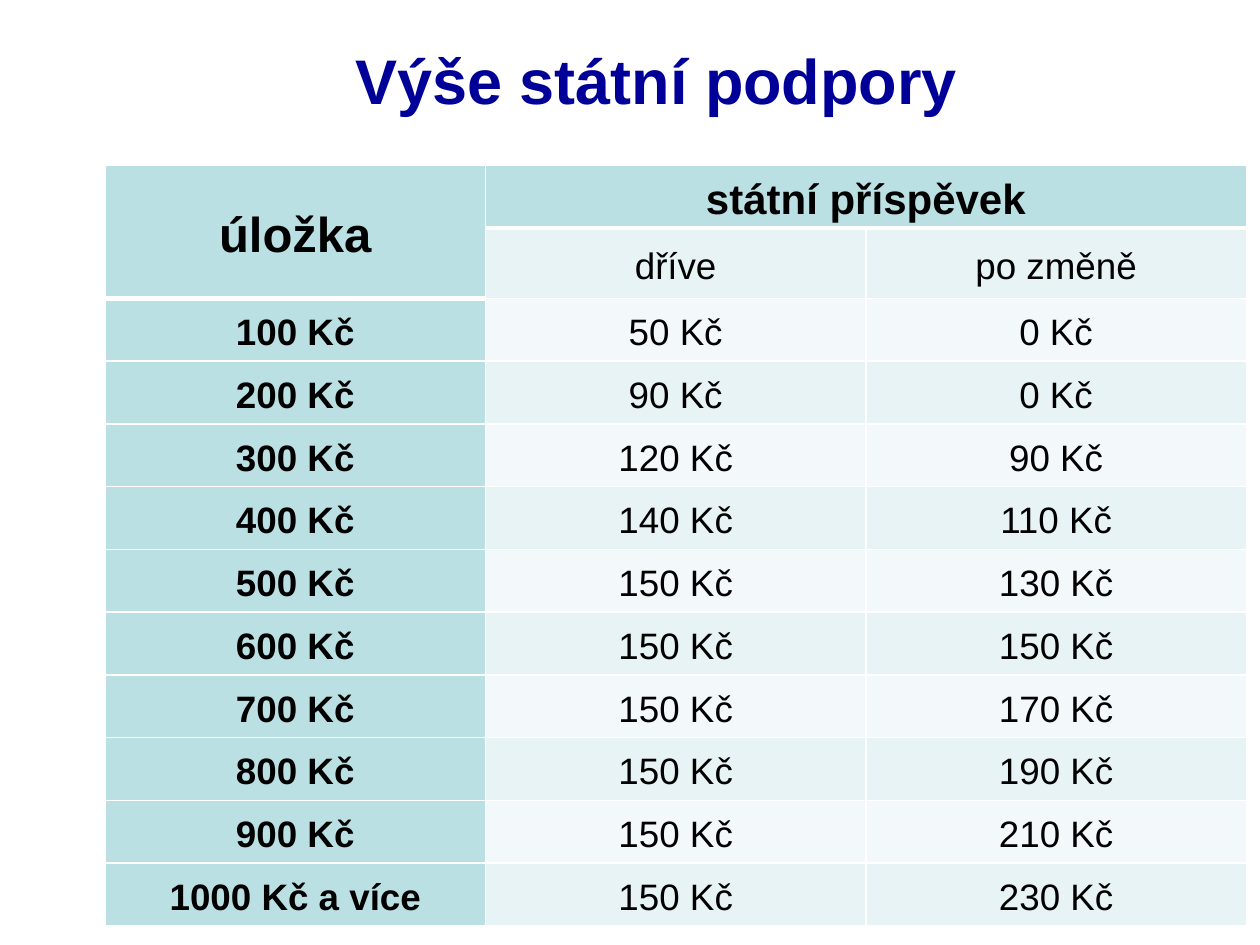
from lxml.etree import SubElement
from pptx import Presentation
from pptx.dml.color import RGBColor
from pptx.enum.text import MSO_ANCHOR as Anchor, PP_ALIGN as Align
from pptx.oxml.ns import qn
from pptx.util import Pt

NAVY = RGBColor(0x00, 0x00, 0x99)
BLACK = RGBColor(0x00, 0x00, 0x00)
WHITE = RGBColor(0xFF, 0xFF, 0xFF)
TEAL = RGBColor(0xBB, 0xE0, 0xE3)
BAND_DARK = RGBColor(0xE7, 0xF3, 0xF4)
BAND_LIGHT = RGBColor(0xF3, 0xF9, 0xFA)

ROWS = [
    ("úložka", "státní příspěvek", ""),
    ("", "dříve", "po změně"),
    ("100 Kč", "50 Kč", "0 Kč"),
    ("200 Kč", "90 Kč", "0 Kč"),
    ("300 Kč", "120 Kč", "90 Kč"),
    ("400 Kč", "140 Kč", "110 Kč"),
    ("500 Kč", "150 Kč", "130 Kč"),
    ("600 Kč", "150 Kč", "150 Kč"),
    ("700 Kč", "150 Kč", "170 Kč"),
    ("800 Kč", "150 Kč", "190 Kč"),
    ("900 Kč", "150 Kč", "210 Kč"),
    ("1000 Kč a více", "150 Kč", "230 Kč"),
]
COLUMN_WIDTH = Pt(217.4)
ROW_HEIGHT = Pt(35.88)
HEADER_SIZES = {(0, 0): 28, (0, 1): 24}
HEADER_BOTTOMS = {(0, 0), (1, 0), (0, 1), (0, 2)}


def style_paragraph(para, size, color, bold):
    para.alignment = Align.CENTER
    para.font.name = "Arial"
    para.font.size = Pt(size)
    para.font.bold = bold
    para.font.color.rgb = color


def add_borders(cell, top, bottom):
    """Draw white cell borders; top and bottom are widths in points."""
    properties = cell._tc.get_or_add_tcPr()
    for side, width in (("L", 1), ("R", 1), ("T", top), ("B", bottom)):
        line = SubElement(properties, qn(f"a:ln{side}"), w=str(Pt(width)))
        fill = SubElement(line, qn("a:solidFill"))
        SubElement(fill, qn("a:srgbClr"), val=str(WHITE))


deck = Presentation()
deck.slide_width, deck.slide_height = Pt(720), Pt(540)
page = deck.slides.add_slide(deck.slide_layouts[6])

title = page.shapes.add_textbox(Pt(65.5), Pt(15), Pt(619), Pt(61))
title.text_frame.word_wrap = True
title.text_frame.vertical_anchor = Anchor.MIDDLE
title.text_frame.text = "Výše státní podpory"
style_paragraph(title.text_frame.paragraphs[0], 36, NAVY, True)

table = page.shapes.add_table(
    len(ROWS), 3, Pt(60), Pt(94.5), COLUMN_WIDTH * 3, ROW_HEIGHT * len(ROWS)
).table
for column in table.columns:
    column.width = COLUMN_WIDTH
for row in table.rows:
    row.height = ROW_HEIGHT
table.cell(0, 0).merge(table.cell(1, 0))
table.cell(0, 1).merge(table.cell(0, 2))

for r, texts in enumerate(ROWS):
    for c, text in enumerate(texts):
        cell = table.cell(r, c)
        header = r == 0 or c == 0
        add_borders(
            cell,
            top=3 if (r - 1, c) in HEADER_BOTTOMS and (r, c) != (1, 0) else 1,
            bottom=3 if (r, c) in HEADER_BOTTOMS else 1,
        )
        cell.fill.solid()
        band = BAND_DARK if r % 2 else BAND_LIGHT
        cell.fill.fore_color.rgb = TEAL if header else band
        cell.margin_left = cell.margin_right = Pt(0.75)
        cell.margin_top = cell.margin_bottom = Pt(0.75)
        cell.vertical_anchor = Anchor.MIDDLE
        if not text:
            continue
        cell.text = text
        para = cell.text_frame.paragraphs[0]
        para.line_spacing = 1.15
        para.space_after = Pt(10)
        style_paragraph(para, HEADER_SIZES.get((r, c), 21), BLACK, header)

deck.save("out.pptx")
